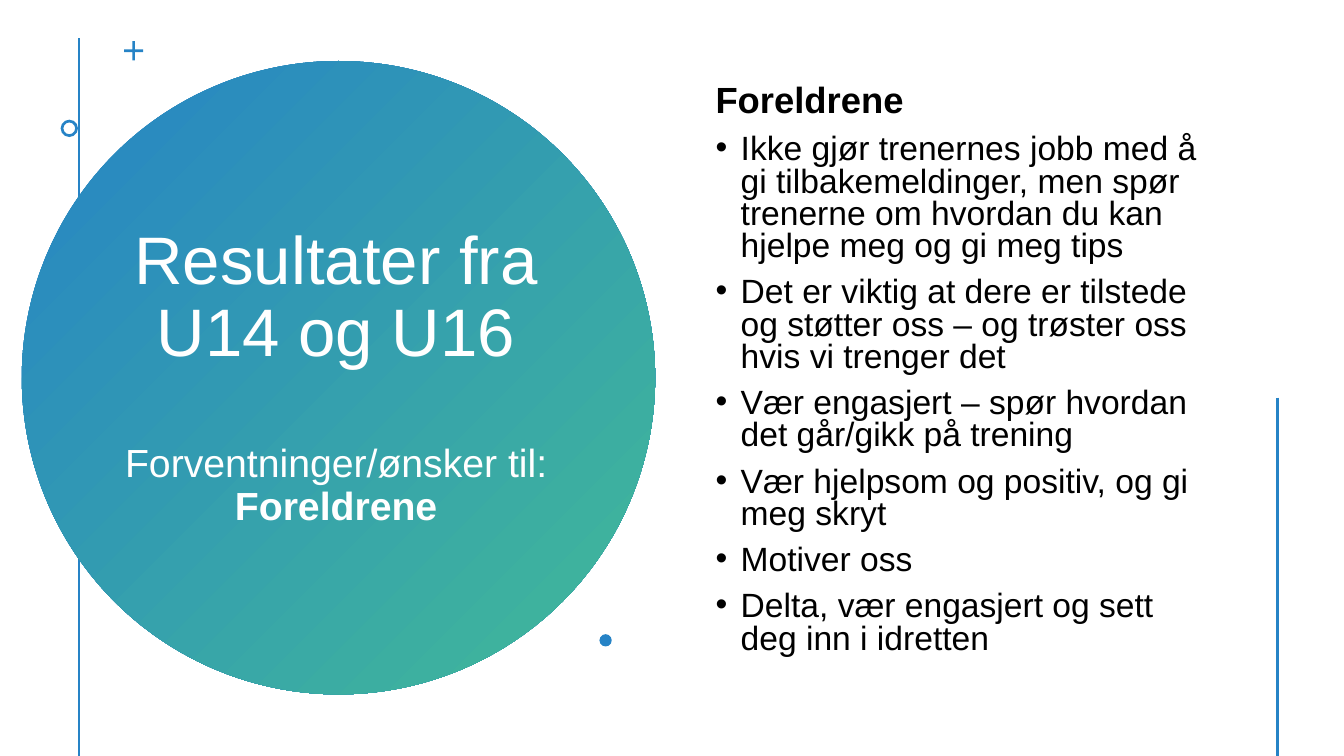
"""Build the slide with the U14 and U16 results about the parents."""
from dataclasses import dataclass

from lxml import etree
from pptx import Presentation
from pptx import util as u
from pptx.dml import color
from pptx.enum import shapes, text
from pptx.oxml import ns


@dataclass(frozen=True)
class Theme:
    font: str = "Arial"
    blue: color.RGBColor = color.RGBColor(0x26, 0x83, 0xC6)
    green: color.RGBColor = color.RGBColor(0x42, 0xBA, 0x97)
    white: color.RGBColor = color.RGBColor(255, 255, 255)
    black: color.RGBColor = color.RGBColor(0, 0, 0)
    title_size: int = 48
    subtitle_size: int = 28
    heading_size: int = 26
    bullet_size: int = 24
    line_width: int = 2


@dataclass(frozen=True)
class Box:
    left: float
    top: float
    width: float
    height: float


@dataclass(frozen=True)
class Ornament:
    kind: shapes.MSO_SHAPE
    box: Box
    adjustment: float | None = None


@dataclass(frozen=True)
class Rule:
    x: float
    top: float


THEME = Theme()
SLIDE_WIDTH, SLIDE_HEIGHT = 960, 540
BULLET_INDENT = 18
PARAGRAPH_GAP = 10
SUBTITLE_GAP = 52

LEFT_RULE = Rule(56.4, 27.5)
RIGHT_RULE = Rule(912.3, 284)
CIRCLE = Ornament(shapes.MSO_SHAPE.OVAL, Box(15.6, 43.6, 452.4, 452.4))
TITLE_BOX = Box(43.2, 101.5, 393.8, 336.2)
BODY_BOX = Box(504, 30.2, 368.6, 470.2)
ORNAMENTS = (
    Ornament(shapes.MSO_SHAPE.CROSS, Box(88.6, 29.4, 13.7, 13.7), 0.43),
    Ornament(shapes.MSO_SHAPE.DONUT, Box(43.3, 85.5, 12.4, 12.4), 0.16),
    Ornament(shapes.MSO_SHAPE.OVAL, Box(428.2, 453, 8.8, 8.8)),
)
HEADING = "Foreldrene"
BULLETS = (
    "Ikke gjør trenernes jobb med å gi tilbakemeldinger, men spør trenerne om "
    "hvordan du kan hjelpe meg og gi meg tips",
    "Det er viktig at dere er tilstede og støtter oss – og trøster oss hvis vi trenger det",
    "Vær engasjert – spør hvordan det går/gikk på trening",
    "Vær hjelpsom og positiv, og gi meg skryt",
    "Motiver oss",
    "Delta, vær engasjert og sett deg inn i idretten",
)


def place(shape, box: Box) -> None:
    shape.left, shape.top = u.Pt(box.left), u.Pt(box.top)
    shape.width, shape.height = u.Pt(box.width), u.Pt(box.height)


def prepare_frame(frame) -> None:
    frame.word_wrap = True
    frame.auto_size = text.MSO_AUTO_SIZE.NONE
    frame.vertical_anchor = text.MSO_ANCHOR.MIDDLE


def add_run(paragraph, words: str, size: int, tint: color.RGBColor, bold: bool = False) -> None:
    run = paragraph.add_run()
    run.text = words
    run.font.name = THEME.font
    run.font.size = u.Pt(size)
    run.font.bold = bold
    run.font.color.rgb = tint


def add_bullet(paragraph) -> None:
    properties = paragraph._p.get_or_add_pPr()
    properties.set("marL", str(u.Pt(BULLET_INDENT)))
    properties.set("indent", str(-u.Pt(BULLET_INDENT)))
    etree.SubElement(properties, ns.qn("a:buFont"), typeface=THEME.font)
    etree.SubElement(properties, ns.qn("a:buChar"), char="•")


def add_rule(slide, rule: Rule) -> None:
    connector = slide.shapes.add_connector(
        shapes.MSO_CONNECTOR.STRAIGHT,
        u.Pt(rule.x), u.Pt(rule.top), u.Pt(rule.x), u.Pt(SLIDE_HEIGHT),
    )
    connector.line.color.rgb = THEME.blue
    connector.line.width = u.Pt(THEME.line_width)
    etree.SubElement(connector._element.spPr, ns.qn("a:effectLst"))


def add_ornament(slide, ornament: Ornament):
    shape = slide.shapes.add_shape(ornament.kind, 0, 0, 0, 0)
    place(shape, ornament.box)
    shape.shadow.inherit = False
    shape.fill.solid()
    shape.fill.fore_color.rgb = THEME.blue
    shape.line.fill.background()
    if ornament.adjustment is not None:
        shape.adjustments[0] = ornament.adjustment
    return shape


def add_circle(slide) -> None:
    fill = add_ornament(slide, CIRCLE).fill
    fill.gradient()
    fill.gradient_angle = 315
    for stop, position, tint in zip(fill.gradient_stops, (0, 1), (THEME.blue, THEME.green)):
        stop.position = position
        stop.color.rgb = tint


def fill_title(slide) -> None:
    title = slide.shapes.title
    place(title, TITLE_BOX)
    title.element.getparent().append(title.element)
    frame = title.text_frame
    prepare_frame(frame)
    headline, subtitle = frame.paragraphs[0], frame.add_paragraph()
    for paragraph in (headline, subtitle):
        paragraph.alignment = text.PP_ALIGN.CENTER
        paragraph.line_spacing = 0.9
    subtitle.space_before = u.Pt(SUBTITLE_GAP)
    add_run(headline, "Resultater fra U14 og U16", THEME.title_size, THEME.white)
    add_run(subtitle, "Forventninger/ønsker til:", THEME.subtitle_size, THEME.white)
    subtitle.add_line_break()
    add_run(subtitle, HEADING, THEME.subtitle_size, THEME.white, bold=True)


def add_body(slide) -> None:
    body = slide.shapes.add_textbox(0, 0, 0, 0)
    place(body, BODY_BOX)
    frame = body.text_frame
    prepare_frame(frame)
    add_run(frame.paragraphs[0], HEADING, THEME.heading_size, THEME.black, bold=True)
    for words in BULLETS:
        paragraph = frame.add_paragraph()
        add_bullet(paragraph)
        add_run(paragraph, words, THEME.bullet_size, THEME.black)
    for paragraph in frame.paragraphs:
        paragraph.line_spacing = 0.8
        paragraph.space_before = u.Pt(PARAGRAPH_GAP)


def main() -> None:
    presentation = Presentation()
    presentation.slide_width = u.Pt(SLIDE_WIDTH)
    presentation.slide_height = u.Pt(SLIDE_HEIGHT)
    slide = presentation.slides.add_slide(presentation.slide_layouts[5])
    add_rule(slide, LEFT_RULE)
    add_circle(slide)
    fill_title(slide)
    for ornament in ORNAMENTS:
        add_ornament(slide, ornament)
    add_body(slide)
    add_rule(slide, RIGHT_RULE)
    presentation.save("out.pptx")


if __name__ == "__main__":
    main()
